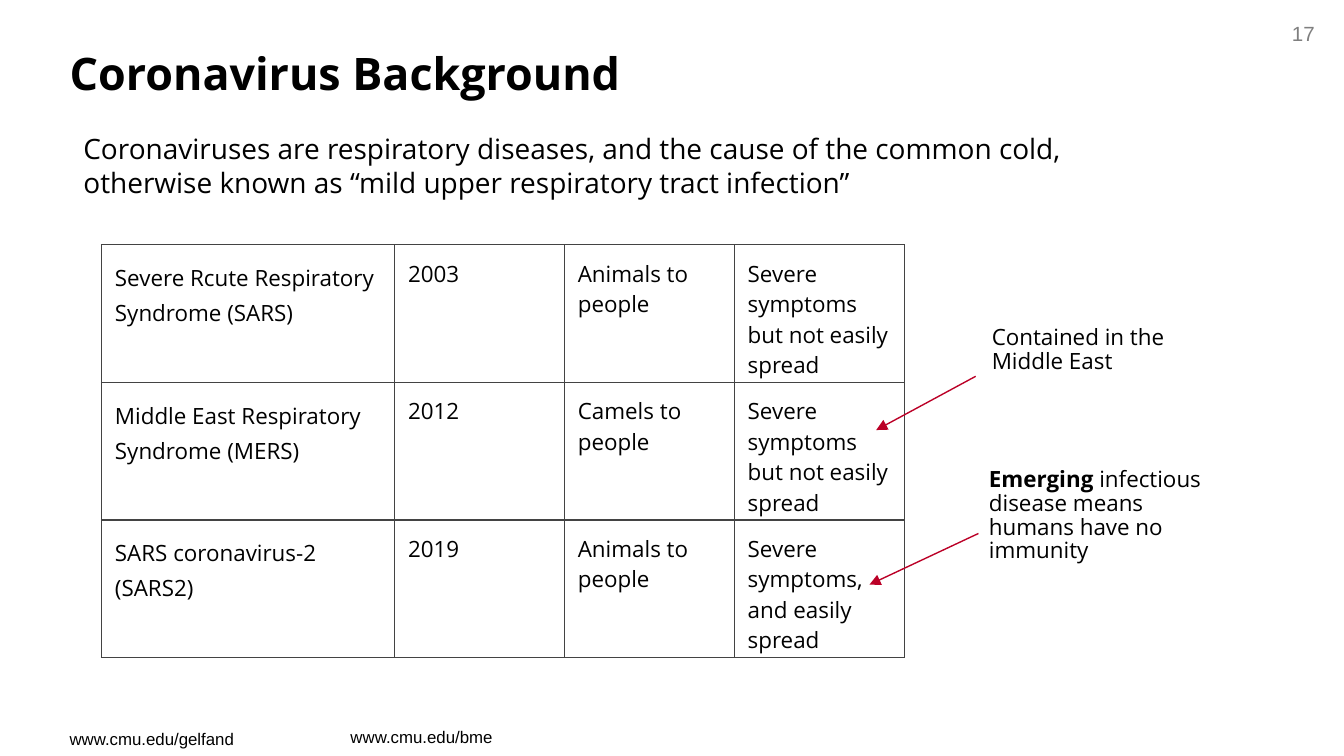
"""Build the Coronavirus Background slide."""
from dataclasses import dataclass

from lxml import etree
from pptx import Presentation
from pptx.dml import color
from pptx.enum import shapes, text
from pptx.oxml import ns
from pptx.util import Pt


@dataclass(frozen=True)
class Theme:
    black: str = "000000"
    grey: str = "7F7F7F"
    border: str = "434343"
    red: str = "BB0027"
    font: str = "Open Sans"
    small_font: str = "Arial"
    title: float = 24
    body: float = 15
    note: float = 12
    number: float = 11
    footer: float = 9
    line: float = 0.75
    pad: float = 7.2


T = Theme()


@dataclass(frozen=True)
class Label:
    box: tuple[float, float, float, float]
    words: str
    size: float
    lead: str = ""
    bold: bool = False
    font: str = T.font
    ink: str = T.black
    pad_y: float = T.pad
    spacing: float | None = None
    align: text.PP_ALIGN = text.PP_ALIGN.LEFT
    anchor: text.MSO_ANCHOR = text.MSO_ANCHOR.TOP


@dataclass(frozen=True)
class Arrow:
    start: tuple[float, float]
    end: tuple[float, float]


LABELS = (
    Label((671.8, 7.9, 39.6, 20.9), "17", T.number, font=T.small_font,
          ink=T.grey, pad_y=3.6, align=text.PP_ALIGN.RIGHT),
    Label((30.2, 386.6, 103.7, 18), "www.cmu.edu/gelfand", T.footer,
          font=T.small_font, pad_y=3.6),
    Label((180.7, 385.9, 103.7, 18), "www.cmu.edu/bme", T.footer,
          font=T.small_font, pad_y=3.6),
    Label((30.2, 18, 605.5, 42.5), "Coronavirus Background", T.title,
          bold=True, anchor=text.MSO_ANCHOR.BOTTOM),
    Label((37.6, 63.4, 605.5, 177.8),
          "Coronaviruses are respiratory diseases, and the cause of the common cold, "
          "otherwise known as “mild upper respiratory tract infection”", T.body),
    Label((524.2, 167.8, 121, 50.4), "Contained in the Middle East", T.note,
          spacing=0.88),
    Label((522.7, 244.1, 145.4, 55.4),
          " infectious disease means humans have no immunity", T.note,
          lead="Emerging", spacing=0.88),
)
ARROWS = (
    Arrow((522.7, 201.6), (469.4, 230.4)),
    Arrow((524.2, 285.8), (465.8, 313.2)),
)
DISEASES = (
    ("Severe Rcute Respiratory Syndrome (SARS)", "2003", "Animals to people",
     "Severe symptoms but not easily spread"),
    ("Middle East Respiratory Syndrome (MERS)", "2012", "Camels to people",
     "Severe symptoms but not easily spread"),
    ("SARS coronavirus-2 (SARS2)", "2019", "Animals to people",
     "Severe symptoms, and easily spread"),
)
COLUMNS = (157, 91, 91, 91)
ROW = 73.7


def set_font(font, name: str, size: float, ink: str, bold: bool = False) -> None:
    """Apply a typeface, size, colour and weight."""
    font.name, font.size, font.bold = name, Pt(size), bold
    font.color.rgb = color.RGBColor.from_string(ink)


def set_margins(frame, x: float, y: float) -> None:
    """Set equal side margins and equal top and bottom margins."""
    frame.margin_left = frame.margin_right = Pt(x)
    frame.margin_top = frame.margin_bottom = Pt(y)


def add_label(s, label: Label) -> None:
    """Draw a wrapped text box with an optional bold lead."""
    tf = s.shapes.add_textbox(*map(Pt, label.box)).text_frame
    tf.word_wrap = True
    tf.vertical_anchor = label.anchor
    set_margins(tf, T.pad, label.pad_y)
    p = tf.paragraphs[0]
    p.alignment = label.align
    p.line_spacing = label.spacing
    set_font(p.font, label.font, label.size, label.ink, label.bold)
    if label.lead:
        r = p.add_run()
        r.text, r.font.bold = label.lead, True
    p.add_run().text = label.words


def add_borders(cell) -> None:
    """Draw a thin line on all four sides of a cell."""
    tc_pr = cell._tc.get_or_add_tcPr()
    for side in ("a:lnL", "a:lnR", "a:lnT", "a:lnB"):
        ln = etree.SubElement(tc_pr, ns.qn(side), w=str(Pt(T.line)))
        fill = etree.SubElement(ln, ns.qn("a:solidFill"))
        etree.SubElement(fill, ns.qn("a:srgbClr"), val=T.border)


def add_disease_table(s) -> None:
    """Draw the table comparing the three diseases."""
    frame = s.shapes.add_table(len(DISEASES), len(COLUMNS), Pt(54.4), Pt(131.2),
                               Pt(sum(COLUMNS)), Pt(ROW * len(DISEASES)))
    table = frame.table
    table.first_row = table.horz_banding = False
    for column, width in zip(table.columns, COLUMNS):
        column.width = Pt(width)
    for i, disease in enumerate(DISEASES):
        table.rows[i].height = Pt(ROW)
        for j, words in enumerate(disease):
            cell = table.cell(i, j)
            set_margins(cell, T.pad, T.pad)
            add_borders(cell)
            cell.fill.background()
            p = cell.text_frame.paragraphs[0]
            p.line_spacing = 1.15 if j == 0 else None
            set_font(p.font, T.font, T.note, T.black)
            p.add_run().text = words


def add_arrow(s, arrow: Arrow) -> None:
    """Draw a red line that ends in a triangle."""
    sp = s.shapes.add_connector(shapes.MSO_CONNECTOR.STRAIGHT,
                                *map(Pt, arrow.start + arrow.end))
    sp.line.width = Pt(T.line)
    sp.line.color.rgb = color.RGBColor.from_string(T.red)
    etree.SubElement(sp.line._get_or_add_ln(), ns.qn("a:tailEnd"), type="triangle")
    etree.SubElement(sp._element.spPr, ns.qn("a:effectLst"))


def main() -> None:
    """Assemble and save the slide."""
    prs = Presentation()
    prs.slide_width, prs.slide_height = Pt(720), Pt(405)
    s = prs.slides.add_slide(prs.slide_layouts[6])
    for label in LABELS:
        add_label(s, label)
    add_disease_table(s)
    for arrow in ARROWS:
        add_arrow(s, arrow)
    prs.save("out.pptx")


if __name__ == "__main__":
    main()
